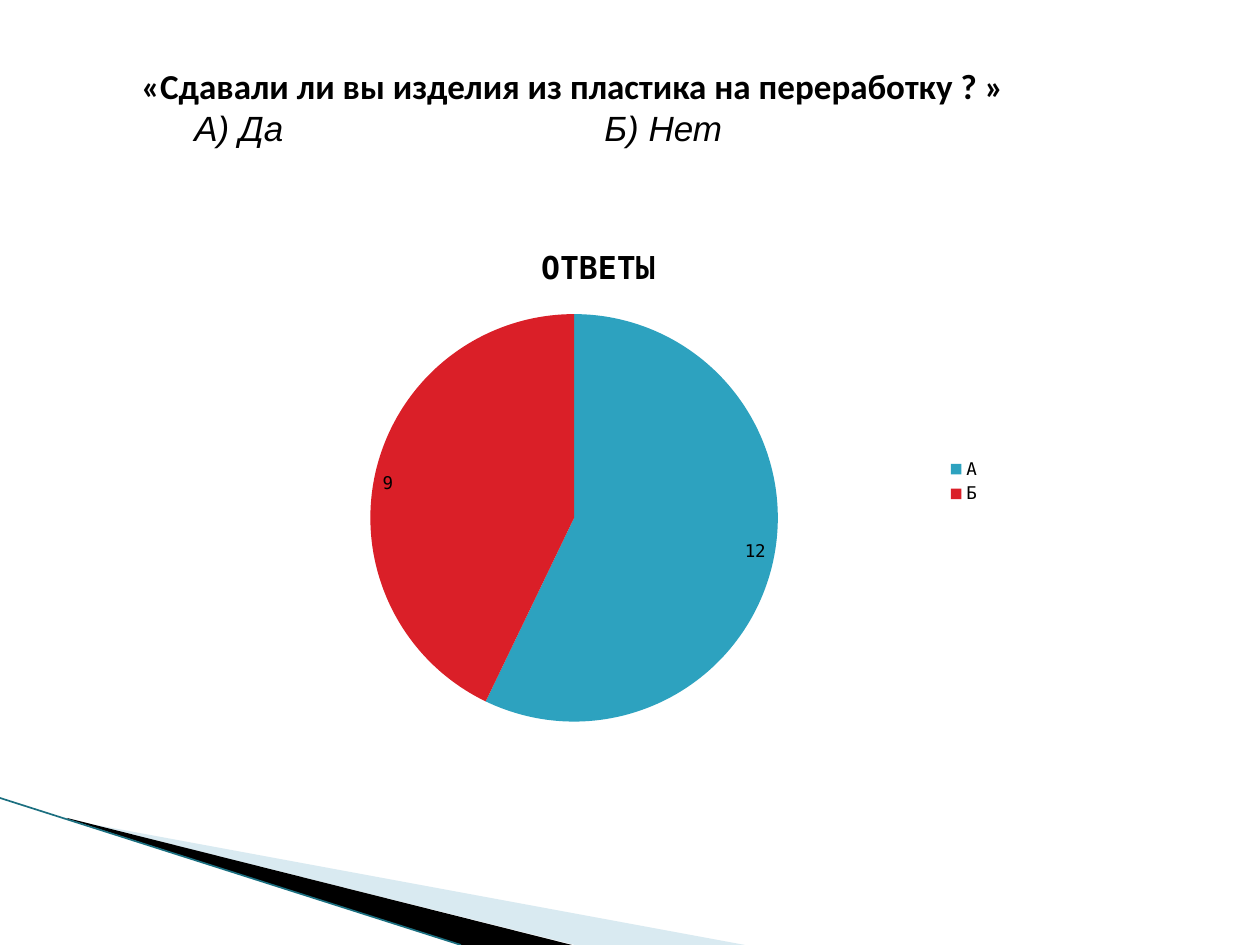
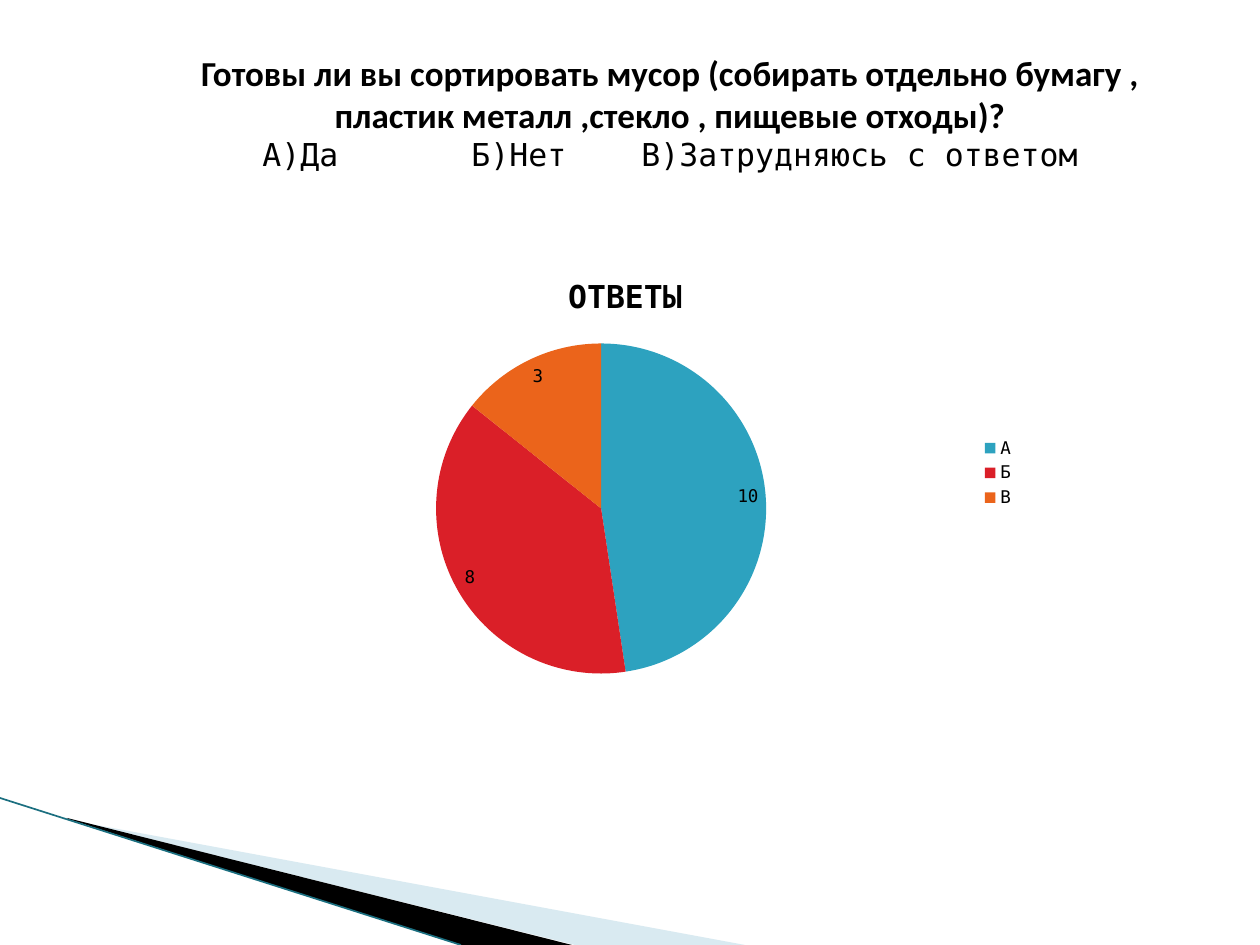
from lxml import etree
from pptx import Presentation
from pptx.chart.data import CategoryChartData
from pptx.dml.color import RGBColor
from pptx.enum.chart import XL_CHART_TYPE, XL_LABEL_POSITION, XL_LEGEND_POSITION
from pptx.enum.shapes import MSO_CONNECTOR
from pptx.enum.text import MSO_ANCHOR, PP_ALIGN
from pptx.oxml.ns import qn
from pptx.util import Pt

PIE = XL_CHART_TYPE.PIE
INSIDE_END = XL_LABEL_POSITION.INSIDE_END
LEGEND_RIGHT = XL_LEGEND_POSITION.RIGHT
STRAIGHT = MSO_CONNECTOR.STRAIGHT
TOP, MIDDLE = MSO_ANCHOR.TOP, MSO_ANCHOR.MIDDLE
LEFT, CENTER = PP_ALIGN.LEFT, PP_ALIGN.CENTER

EMU_PER_PX = 914400 / 126
PAGE_SIZE = (1260, 945)
BLACK = "000000"
SLICE_COLORS = ["2DA2BF", "DA1F28", "EB641B"]
MONO = "DejaVu Sans Mono"
CHART_TITLE = "ОТВЕТЫ"
CATEGORIES = ["А", "Б", "В"]

PALE_WEDGE = [(69, 820), (745, 945), (575, 945), (69, 819)]
DARK_WEDGE = [(67, 818), (572, 945), (460, 945), (68, 819)]
EDGE_LINE = (0, 798, 461, 945)

SURVEY = [
    {
        "question": "«Сдавали ли вы изделия из пластика на переработку ? »",
        "answers": ["А) Да", "Б) Нет"],
        "tab_stops": [59, 469],
        "answer_font": ("Arial", 20, False, True),
        "text_at": (123, 58, 1137, 97),
        "anchor": MIDDLE,
        "align": LEFT,
        "indent": 6,
        "chart_at": (203, 224, 790, 515),
        "votes": [12, 9, 0],
    },
    {
        "question": "Готовы ли вы сортировать мусор (собирать отдельно бумагу , "
                    "пластик металл ,стекло , пищевые отходы)?",
        "answers": ["А)Да", "Б)Нет", "В)Затрудняюсь с ответом"],
        "tab_stops": [86, 295, 465],
        "answer_font": (MONO, 18, False, False),
        "text_at": (164, 45, 1012, 136),
        "anchor": TOP,
        "align": CENTER,
        "indent": 0,
        "chart_at": (223, 255, 804, 436),
        "votes": [10, 8, 3],
    },
]


def px(length):
    return round(length * EMU_PER_PX)


def scaled(lengths):
    return [px(length) for length in lengths]


def color(value):
    return RGBColor.from_string(value)


def set_font(font, name, size, bold=False, italic=False):
    font.name, font.size = name, Pt(size)
    font.bold, font.italic = bold, italic
    font.color.rgb = color(BLACK)


def add_wedge(page, points, fill, opacity=100):
    builder = page.shapes.build_freeform(*points[0], scale=EMU_PER_PX)
    builder.add_line_segments(points[1:], close=True)
    wedge = builder.convert_to_shape()
    wedge.shadow.inherit = False
    wedge.fill.solid()
    wedge.fill.fore_color.rgb = color(fill)
    wedge.line.fill.background()
    if opacity < 100:
        tint = wedge.fill._xPr.find(".//" + qn("a:srgbClr"))
        etree.SubElement(tint, qn("a:alpha"), val=str(opacity * 1000))


def add_corner(page):
    add_wedge(page, PALE_WEDGE, "A0CBDC", 40)
    add_wedge(page, DARK_WEDGE, BLACK)
    edge = page.shapes.add_connector(STRAIGHT, *scaled(EDGE_LINE))
    edge.line.color.rgb = color("1B6F80")
    edge.line.width = Pt(0.95)
    etree.SubElement(edge._element.spPr, qn("a:effectLst"))


def add_question(page, item):
    box = page.shapes.add_textbox(*scaled(item["text_at"]))
    frame = box.text_frame
    frame.word_wrap = True
    frame.vertical_anchor = item["anchor"]
    frame.text = item["question"]
    question = frame.paragraphs[0]
    question.alignment = item["align"]
    question._p.get_or_add_pPr().set("marL", str(px(item["indent"])))
    set_font(question.runs[0].font, "Calibri", 20, bold=True)

    answers = frame.add_paragraph()
    answers.alignment = LEFT
    tabs = etree.SubElement(answers._p.get_or_add_pPr(), qn("a:tabLst"))
    for stop in item["tab_stops"]:
        etree.SubElement(tabs, qn("a:tab"), pos=str(px(stop)), algn="l")
    answers.text = "".join("\t" + answer for answer in item["answers"])
    for span in answers.runs:
        set_font(span.font, *item["answer_font"])


def add_votes(page, item):
    data = CategoryChartData()
    data.categories = CATEGORIES
    data.add_series(CHART_TITLE, item["votes"])
    chart = page.shapes.add_chart(PIE, *scaled(item["chart_at"]), data).chart
    set_font(chart.font, MONO, 10)
    chart.has_title = True
    chart.chart_title.include_in_layout = False
    title = chart.chart_title.text_frame
    title.text = CHART_TITLE
    set_font(title.paragraphs[0].runs[0].font, MONO, 18, bold=True)

    chart.has_legend = True
    legend = chart.legend
    legend.position = LEGEND_RIGHT
    legend.include_in_layout = False

    plot = chart.plots[0]
    plot.vary_by_categories = True
    plot.has_data_labels = True
    labels = plot.data_labels
    labels.show_value = True
    labels.position = INSIDE_END
    labels.number_format = "0;;;"
    labels.number_format_is_linked = False
    set_font(labels.font, MONO, 10)

    for index, votes in enumerate(item["votes"]):
        fill = plot.series[0].points[index].format.fill
        fill.solid()
        fill.fore_color.rgb = color(SLICE_COLORS[index])
        if votes == 0:
            entry = etree.Element(qn("c:legendEntry"))
            etree.SubElement(entry, qn("c:idx"), val=str(index))
            etree.SubElement(entry, qn("c:delete"), val="1")
            legend._element.find(qn("c:legendPos")).addnext(entry)


def main():
    deck = Presentation()
    deck.slide_width, deck.slide_height = scaled(PAGE_SIZE)
    for item in SURVEY:
        page = deck.slides.add_slide(deck.slide_layouts[6])
        add_corner(page)
        add_question(page, item)
        add_votes(page, item)
    deck.save("out.pptx")


if __name__ == "__main__":
    main()
